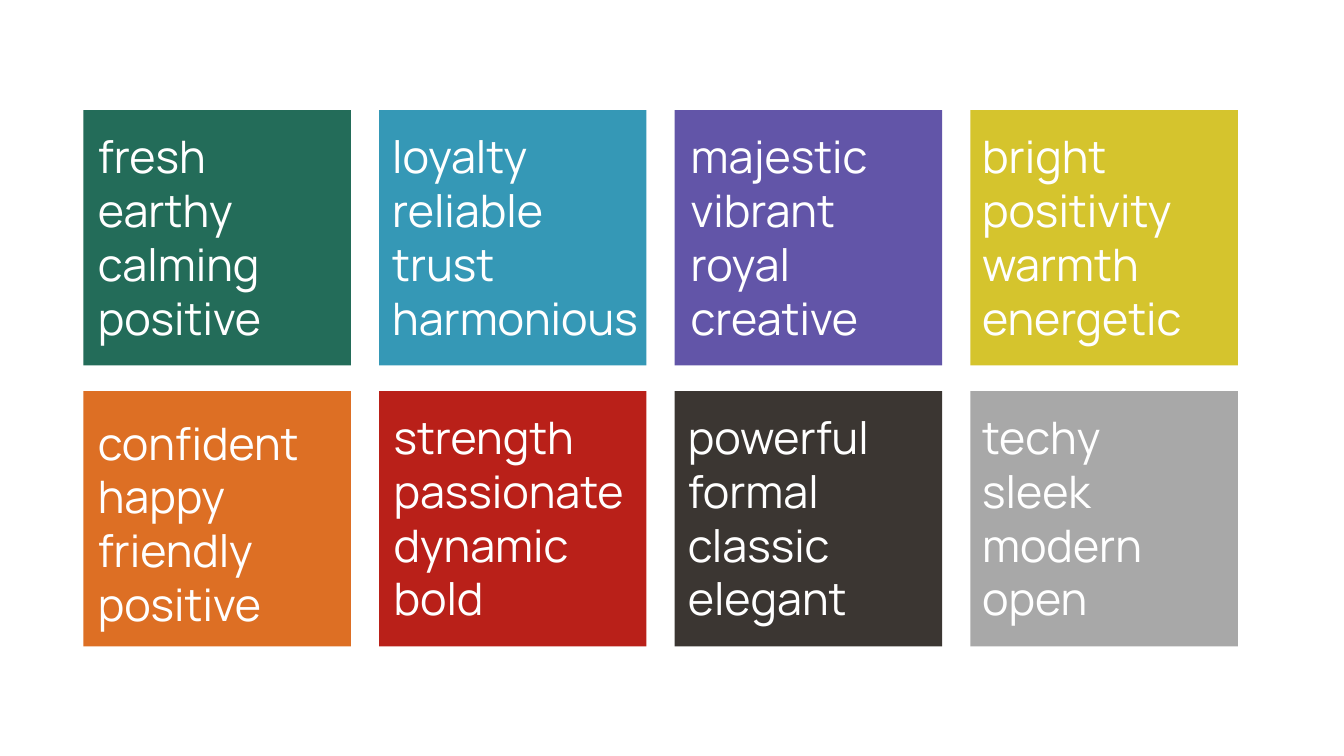
from pptx import Presentation
from pptx.dml.color import RGBColor
from pptx.enum.shapes import MSO_SHAPE
from pptx.util import Inches, Pt

SLIDE_WIDTH = 10
SLIDE_HEIGHT = SLIDE_WIDTH * 9 / 16
GRID_LEFT, GRID_TOP = 0.62, 0.82
COLUMN_STEP, ROW_STEP = 2.2, 2.09
CARD_WIDTH, CARD_HEIGHT = 1.99, 1.9
LABEL_HEIGHT = 1.82
WIDE, NARROW = 2.17, 1.45
COLUMNS = 4
WORD_FORMAT = {"name": "Manrope", "size": Pt(24)}

# Fill, words, the label's offset from the card's corner, and its width
CARDS = [
    ("236C59", "fresh earthy calming positive", (0.01, 0.04), NARROW),
    ("3598B6", "loyalty reliable trust harmonious", (0, 0.04), WIDE),
    ("6255A8", "majestic vibrant royal creative", (0.02, 0.04), WIDE),
    ("D5C42D", "bright positivity warmth energetic", (-0.01, 0.04), WIDE),
    ("DD6F24", "confident happy friendly positive", (0.01, 0.08), WIDE),
    ("B92019", "strength passionate dynamic bold", (0.01, 0.04), WIDE),
    ("3B3632", "powerful formal classic elegant", (0, 0.04), WIDE),
    ("A8A8A8", "techy sleek modern open", (-0.01, 0.04), WIDE),
]


def color(hex_string):
    return RGBColor.from_string(hex_string)


def add_swatch(slide, left, top, fill):
    shape = slide.shapes.add_shape(
        MSO_SHAPE.RECTANGLE,
        Inches(left), Inches(top), Inches(CARD_WIDTH), Inches(CARD_HEIGHT))
    shape.shadow.inherit = False
    shape.fill.solid()
    shape.fill.fore_color.rgb = color(fill)
    shape.line.fill.background()


def add_words(slide, left, top, width, words):
    """Write one word per paragraph in a text box."""
    label = slide.shapes.add_textbox(
        Inches(left), Inches(top), Inches(width), Inches(LABEL_HEIGHT))
    frame = label.text_frame
    frame.word_wrap = True
    for side in ("left", "top", "right", "bottom"):
        setattr(frame, f"margin_{side}", Inches(0.1))
    frame.text = "\n".join(words)
    for paragraph in frame.paragraphs:
        font = paragraph.runs[0].font
        for attribute, value in WORD_FORMAT.items():
            setattr(font, attribute, value)
        font.color.rgb = color("FFFFFF")


def add_card_grid(slide, left, top):
    """Draw all swatches first, then the words above them."""
    corners = [(left + index % COLUMNS * COLUMN_STEP,
                top + index // COLUMNS * ROW_STEP)
               for index in range(len(CARDS))]
    for (x, y), (fill, *_) in zip(corners, CARDS):
        add_swatch(slide, x, y, fill)
    for (x, y), (_, words, (shift_x, shift_y), width) in zip(corners, CARDS):
        add_words(slide, x + shift_x, y + shift_y, width, words.split())


def main():
    presentation = Presentation()
    presentation.slide_width = Inches(SLIDE_WIDTH)
    presentation.slide_height = Inches(SLIDE_HEIGHT)
    slide = presentation.slides.add_slide(presentation.slide_layouts[6])
    add_card_grid(slide, GRID_LEFT, GRID_TOP)
    presentation.save("out.pptx")


if __name__ == "__main__":
    main()
